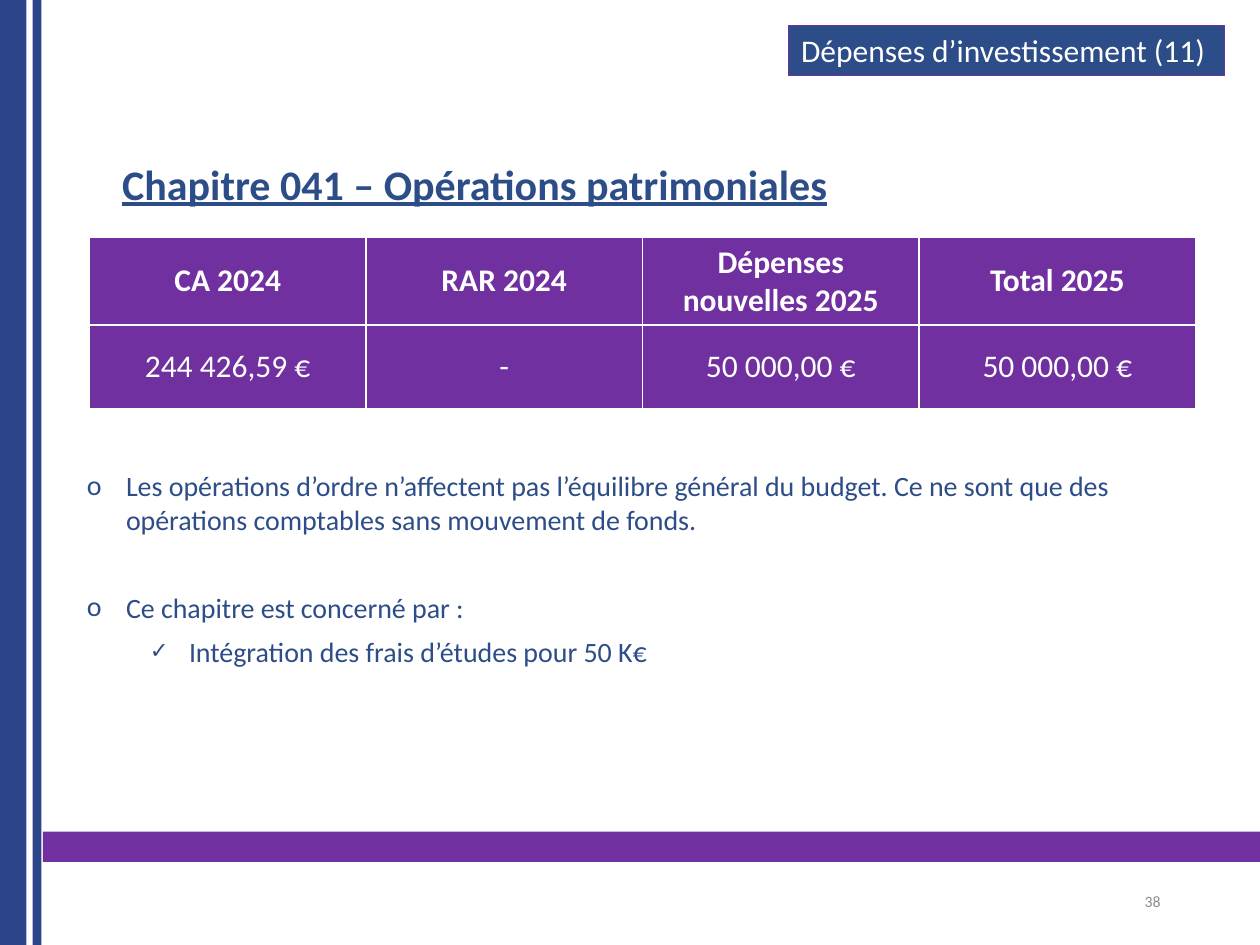
from lxml.etree import SubElement
from pptx import Presentation
from pptx.dml.color import RGBColor
from pptx.enum.shapes import MSO_SHAPE as Shape
from pptx.enum.text import MSO_ANCHOR as Anchor, MSO_AUTO_SIZE as AutoSize, PP_ALIGN as Align
from pptx.oxml.ns import qn
from pptx.util import Inches, Pt

NAVY, BLUE, PURPLE, WHITE, GREY = "2C4588", "2C4D88", "7030A0", "FFFFFF", "8C8C8C"


def color(value):
    return RGBColor.from_string(value)


def place(shape, left, top, width, height):
    shape.left, shape.top = Inches(left), Inches(top)
    shape.width, shape.height = Inches(width), Inches(height)


def style(para, size, ink, bold=False, align=Align.LEFT):
    para.alignment = align
    font = para.font
    font.name, font.size, font.bold = "Calibri", Pt(size), bold
    font.color.rgb = color(ink)


def add_bar(page, left, top, width, height, fill):
    bar = page.shapes.add_shape(
        Shape.RECTANGLE, Inches(left), Inches(top), Inches(width), Inches(height))
    bar.shadow.inherit = False
    bar.fill.solid()
    bar.fill.fore_color.rgb = color(fill)
    bar.line.fill.background()
    return bar


def add_frame(page):
    add_bar(page, 0.34, 6.6, 9.66, 0.24, PURPLE)
    add_bar(page, 0, 0, 0.21, 7.5, NAVY)
    add_bar(page, 0.26, 0, 0.07, 7.5, NAVY)


def add_ribbon(page, left, top, width, height, text):
    ribbon = add_bar(page, left, top, width, height, BLUE)
    ribbon.line.color.rgb = color(PURPLE)
    ribbon.line.width = Pt(0.75)
    ribbon.text_frame.word_wrap = True
    ribbon.text_frame.text = text
    style(ribbon.text_frame.paragraphs[0], 18, WHITE)


def fill_title(page, left, top, width, height, text):
    title = page.shapes.title
    place(title, left, top, width, height)
    frame = title.text_frame
    frame.text = text
    frame.auto_size = AutoSize.NONE
    frame.vertical_anchor = Anchor.TOP
    para = frame.paragraphs[0]
    para.line_spacing = 0.9
    style(para, 24, BLUE, bold=True)
    para.font.underline = True


def add_budget_table(page, left, top, width, height, rows):
    table = page.shapes.add_table(
        len(rows), len(rows[0]), Inches(left), Inches(top), Inches(width), Inches(height)).table
    table.horz_banding = False
    for row_index, row in enumerate(rows):
        for column_index, text in enumerate(row):
            cell = table.cell(row_index, column_index)
            cell.fill.solid()
            cell.fill.fore_color.rgb = color(PURPLE)
            cell.vertical_anchor = Anchor.MIDDLE
            cell.text = text
            style(cell.text_frame.paragraphs[0], 18, WHITE, row_index == 0, Align.CENTER)


def add_bullet(para, mark, margin, percent):
    props = para._p.get_or_add_pPr()
    props.set("marL", str(Inches(margin)))
    props.set("indent", str(Inches(-0.31)))
    SubElement(props, qn("a:buSzPct")).set("val", str(percent * 1000))
    SubElement(props, qn("a:buFont")).set("typeface", "Calibri")
    SubElement(props, qn("a:buChar")).set("char", mark)


def fill_notes_list(page, left, top, width, height, items):
    body = page.placeholders[1]
    place(body, left, top, width, height)
    frame = body.text_frame
    frame.auto_size = AutoSize.NONE
    frame.text = "\n".join(text for text, _, _ in items)
    for para, (_, level, gap) in zip(frame.paragraphs, items):
        para.level = level
        add_bullet(para, *(("✓", 0.81, 80) if level else ("o", 0.31, 100)))
        para.space_before, para.space_after = Pt(0), Pt(gap)
        style(para, 16, BLUE)


def add_page_number(page, left, top, width, height, text):
    box = page.shapes.add_textbox(Inches(left), Inches(top), Inches(width), Inches(height))
    frame = box.text_frame
    frame.word_wrap = True
    frame.vertical_anchor = Anchor.MIDDLE
    frame.text = text
    style(frame.paragraphs[0], 9, GREY, align=Align.RIGHT)


def main():
    deck = Presentation()
    deck.slide_width, deck.slide_height = Inches(10), Inches(7.5)
    page = deck.slides.add_slide(deck.slide_layouts[1])
    add_frame(page)
    fill_title(page, 0.87, 1.25, 9.03, 0.63, "Chapitre 041 – Opérations patrimoniales")
    add_page_number(page, 7.06, 6.95, 2.25, 0.4, "38")
    add_ribbon(page, 6.26, 0.2, 3.46, 0.4, "Dépenses d’investissement (11)")
    add_budget_table(page, 0.71, 1.88, 8.78, 1.33, [
        ["CA 2024", "RAR 2024", "Dépenses nouvelles 2025", "Total 2025"],
        ["244 426,59 €", "-", "50 000,00 €", "50 000,00 €"],
    ])
    fill_notes_list(page, 0.59, 3.67, 8.9, 1.7, [
        ("Les opérations d’ordre n’affectent pas l’équilibre général du budget. "
         "Ce ne sont que des opérations comptables sans mouvement de fonds.", 0, 31),
        ("Ce chapitre est concerné par :", 0, 6),
        ("Intégration des frais d’études pour 50 K€", 1, 6),
    ])
    deck.save("out.pptx")


if __name__ == "__main__":
    main()
